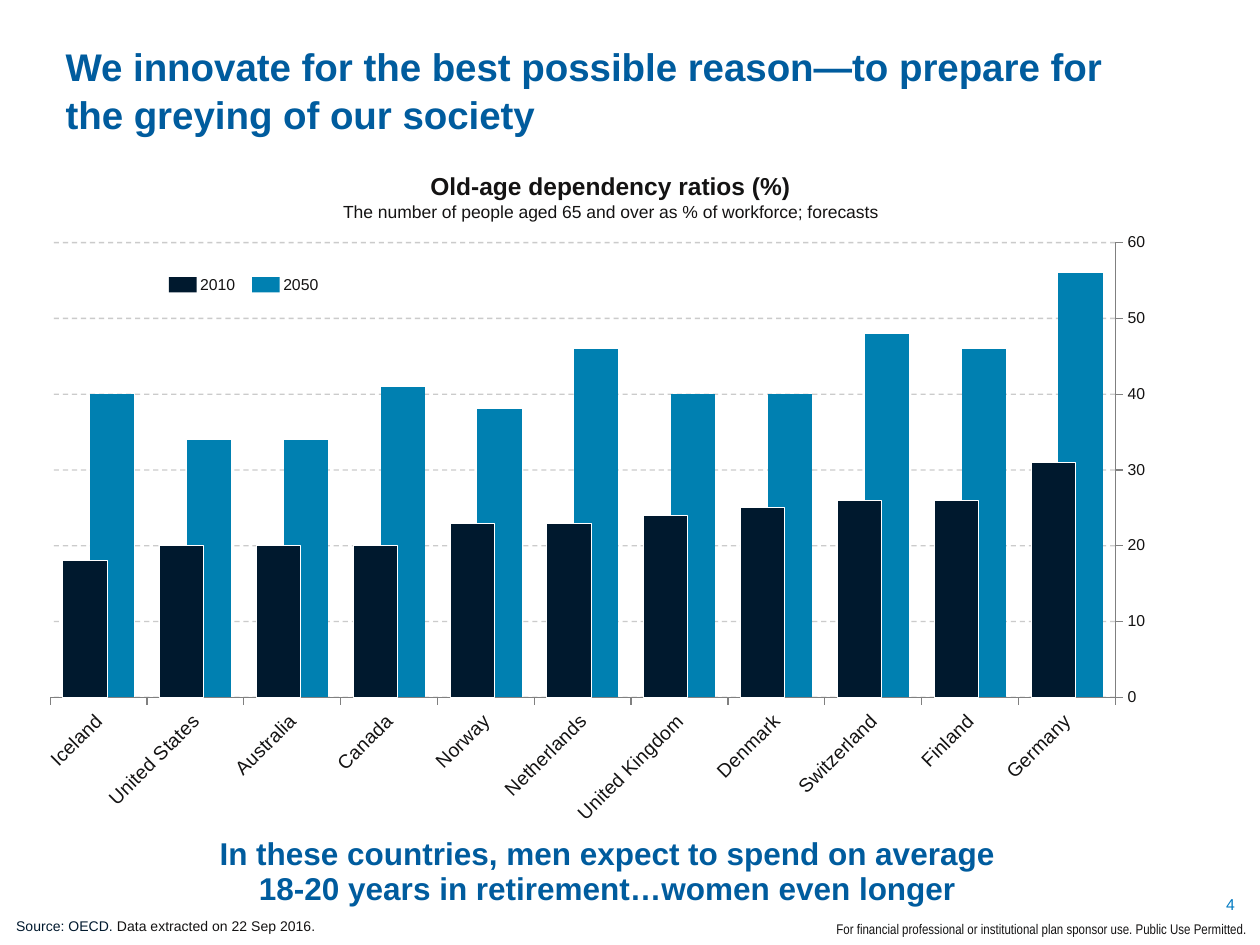
"""Build the old-age dependency ratio slide."""
from lxml import etree
from pptx import Presentation
from pptx.chart.data import CategoryChartData
from pptx.dml.color import RGBColor
from pptx.enum.chart import XL_CHART_TYPE, XL_TICK_MARK
from pptx.enum.dml import MSO_LINE
from pptx.enum.shapes import MSO_SHAPE
from pptx.enum.text import MSO_ANCHOR, MSO_AUTO_SIZE, PP_ALIGN
from pptx.oxml import parse_xml
from pptx.oxml.ns import nsdecls, qn
from pptx.util import Emu, Pt

COLUMNS = XL_CHART_TYPE.COLUMN_CLUSTERED
TICK_OUT, TICK_NONE = XL_TICK_MARK.OUTSIDE, XL_TICK_MARK.NONE
DASH, RECTANGLE = MSO_LINE.DASH, MSO_SHAPE.RECTANGLE
TOP, MIDDLE, NO_FIT = MSO_ANCHOR.TOP, MSO_ANCHOR.MIDDLE, MSO_AUTO_SIZE.NONE
LEFT, CENTER, RIGHT = PP_ALIGN.LEFT, PP_ALIGN.CENTER, PP_ALIGN.RIGHT

PX = 9144
BLUE, CYAN, NAVY, INK = "005C9E", "0080B1", "00192E", "141313"
PAGE_BLUE, GRID, AXIS, WHITE = "007AC2", "BFBFBF", "808080", "FFFFFF"

TITLE = [[("We innovate for the best possible reason—to prepare for "
           "the greying of our society", 22, BLUE, True)]]
HEADING = [
    [("Old-age dependency ratios (%)", 14, INK, True)],
    [("The number of people aged 65 and over as % of workforce; forecasts", 10, INK, False)],
]
TAKEAWAY = [
    [("In these countries, men expect to spend on average", 18, BLUE, True)],
    [("18-20 years in retirement…women even longer", 18, BLUE, True)],
]
SOURCE = [[("Source: OECD. ", 8, NAVY, False),
           ("Data extracted on 22 Sep 2016.", 8, INK, False)]]
PAGE = [[("4", 9, PAGE_BLUE, False)]]
NOTICE = [[("For financial professional or institutional plan sponsor use. "
            "Public Use Permitted.", 8, INK, False)]]

RATIOS = [
    ("Germany", 56, 31), ("Finland", 46, 26), ("Switzerland", 48, 26),
    ("Denmark", 40, 25), ("United Kingdom", 40, 24), ("Netherlands", 46, 23),
    ("Norway", 38, 23), ("Canada", 41, 20), ("Australia", 34, 20),
    ("United States", 34, 20), ("Iceland", 40, 18),
]
SERIES = [("2050", CYAN), ("2010", NAVY)]
PLOT_LAYOUT = {"x": 0.024, "y": 0.034, "w": 0.93, "h": 0.738}
LEGEND_LEFT, LEGEND_STEP = 134, 66


def color(value):
    return RGBColor.from_string(value)


def box(*lengths):
    return [Emu(length * PX) for length in lengths]


def apply(target, formats):
    for name, value in formats.items():
        setattr(target, name, value)


def write(frame, paragraphs, align=LEFT, anchor=TOP, spacing=None, font="Arial"):
    apply(frame, {"word_wrap": True, "auto_size": NO_FIT, "vertical_anchor": anchor})
    for index, runs in enumerate(paragraphs):
        paragraph = frame.add_paragraph() if index else frame.paragraphs[0]
        apply(paragraph, {"alignment": align, "line_spacing": spacing})
        for text, size, shade, bold in runs:
            run = paragraph.add_run()
            run.text = text
            apply(run.font, {"name": font, "size": Pt(size), "bold": bold})
            run.font.color.rgb = color(shade)


def add_text(slide, place, paragraphs, **formats):
    write(slide.shapes.add_textbox(*box(*place)).text_frame, paragraphs, **formats)


def add_rectangle(slide, place, fill):
    rectangle = slide.shapes.add_shape(RECTANGLE, *box(*place))
    rectangle.shadow.inherit = False
    rectangle.fill.solid()
    rectangle.fill.fore_color.rgb = color(fill)
    rectangle.line.fill.background()
    return rectangle


def add_ratio_chart(slide):
    ratios = CategoryChartData()
    ratios.categories = [country for country, *_ in RATIOS]
    for column, (year, _) in enumerate(SERIES, 1):
        ratios.add_series(year, [row[column] for row in RATIOS])
    chart = slide.shapes.add_chart(COLUMNS, *box(18, 176, 909, 489), ratios).chart
    apply(chart, {"has_legend": False, "has_title": False})
    apply(chart.font, {"name": "Arial", "size": Pt(18)})
    chart.font.color.rgb = color(INK)

    plot = chart.plots[0]
    apply(plot, {"gap_width": 57, "overlap": 38, "vary_by_categories": False})
    for series, (_, fill) in zip(plot.series, SERIES):
        series.format.fill.solid()
        series.format.fill.fore_color.rgb = color(fill)
    outline = plot.series[1].format.line
    outline.color.rgb = color(WHITE)
    outline.width = Pt(0.5)

    countries, percent = chart.category_axis, chart.value_axis
    countries.reverse_order = True
    apply(percent, {"minimum_scale": 0, "maximum_scale": 60, "major_unit": 10})
    for axis, size in ((countries, 11), (percent, 9)):
        apply(axis, {"major_tick_mark": TICK_OUT, "minor_tick_mark": TICK_NONE})
        apply(axis.tick_labels.font, {"name": "Arial", "size": Pt(size)})
        axis.tick_labels.font.color.rgb = color(INK)
        axis.format.line.color.rgb = color(AXIS)
        axis.format.line.width = Pt(0.75)
    label_body = countries.tick_labels.font._element.getparent().getparent().getparent().find(qn("a:bodyPr"))
    label_body.set("rot", "-2700000")
    label_body.set("vert", "horz")

    percent.has_major_gridlines = True
    grid = percent.major_gridlines.format.line
    grid.color.rgb = color(GRID)
    apply(grid, {"width": Pt(0.75), "dash_style": DASH})
    shade = percent.major_gridlines._xAx.find(".//" + qn("c:majorGridlines")).find(".//" + qn("a:srgbClr"))
    etree.SubElement(shade, qn("a:alpha")).set("val", "80000")

    modes = "".join(f'<c:{side}Mode val="edge"/>' for side in "xy")
    sizes = "".join(f'<c:{side} val="{value}"/>' for side, value in PLOT_LAYOUT.items())
    plot_area = chart._chartSpace.find(".//" + qn("c:plotArea"))
    for layout in plot_area.findall(qn("c:layout")):
        plot_area.remove(layout)
    plot_area.insert(0, parse_xml(
        f'<c:layout {nsdecls("c")}><c:manualLayout><c:layoutTarget val="inner"/>'
        f'{modes}{sizes}</c:manualLayout></c:layout>'))


def main():
    deck = Presentation()
    deck.slide_width, deck.slide_height = box(1000, 750)
    slide = deck.slides.add_slide(deck.slide_layouts[5])

    add_text(slide, (933, 705, 57, 25), PAGE, align=RIGHT, anchor=MIDDLE)
    add_text(slide, (464, 726, 536, 24), NOTICE, align=RIGHT, font="Arial Narrow")

    title = slide.shapes.title
    apply(title, dict(zip(("left", "top", "width", "height"), box(42, 28, 879, 97))))
    write(title.text_frame, TITLE, spacing=1.04)

    add_ratio_chart(slide)
    heading = add_rectangle(slide, (257, 131, 455, 50), WHITE)
    write(heading.text_frame, HEADING, align=CENTER, anchor=MIDDLE)

    for index, (year, fill) in enumerate(reversed(SERIES)):
        left = LEGEND_LEFT + index * LEGEND_STEP
        add_rectangle(slide, (left, 220, 22, 12), fill)
        add_text(slide, (left + 15, 213, 83, 25), [[(year, 9, INK, False)]])

    add_text(slide, (3, 723, 576, 24), SOURCE)
    add_text(slide, (88, 659, 788, 48), TAKEAWAY, align=CENTER, spacing=Pt(20))
    deck.save("out.pptx")


if __name__ == "__main__":
    main()
